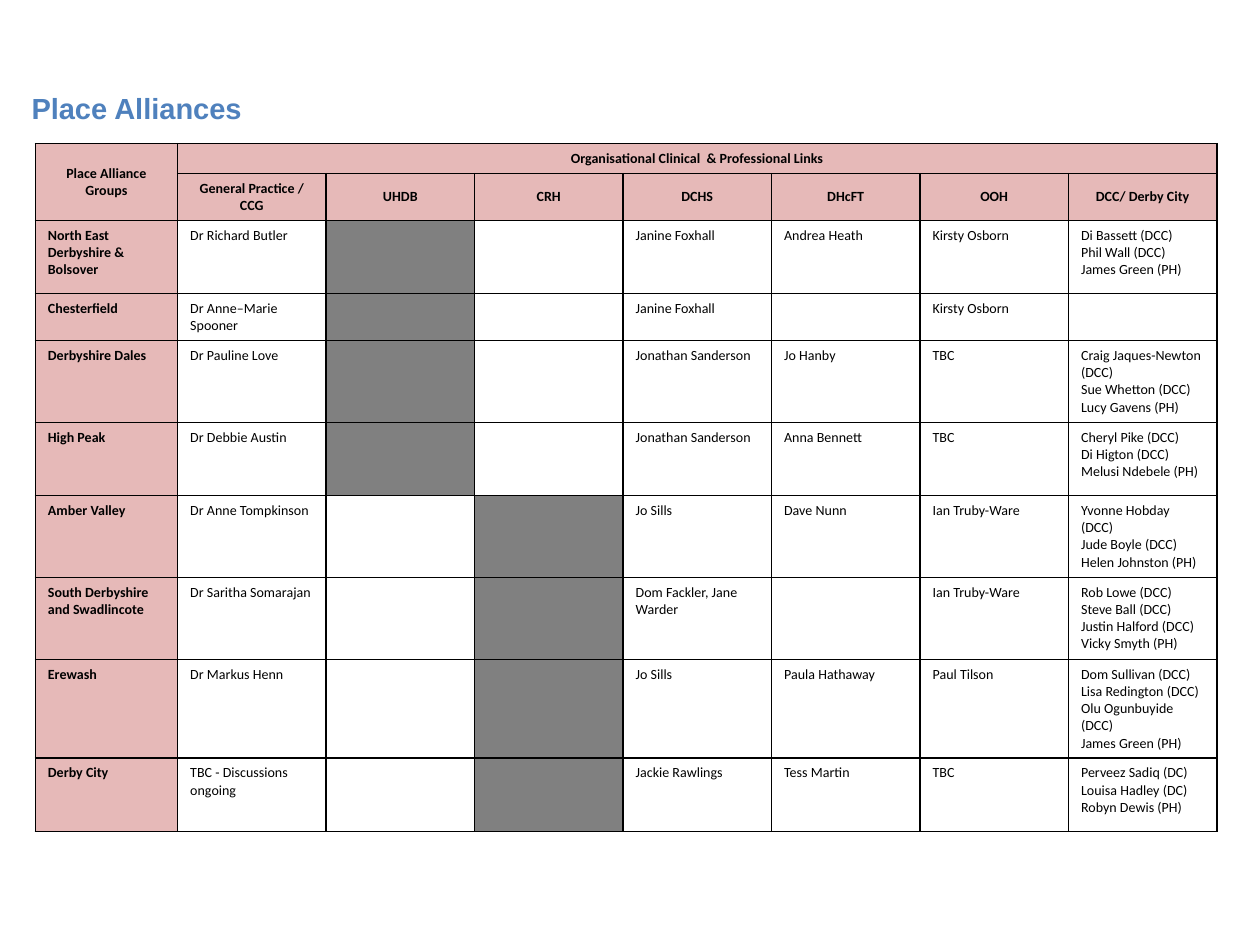
from lxml.etree import SubElement
from pptx import Presentation
from pptx.dml.color import RGBColor as RGB
from pptx.enum.text import MSO_ANCHOR as Anchor, MSO_AUTO_SIZE as Auto, PP_ALIGN as Align
from pptx.oxml.ns import qn
from pptx.util import Inches, Pt

COLOURS = {"title": "4F81BD", "head": "E6B9B8", "cell": "FFFFFF", "grey": "808080", "ink": "000000"}
UNIT = Inches(0.01)
NAMES_COL = 113
ROWS = [23, 37, 58, 37, 65, 58, 65, 65, 78, 58]
GREY = None
HEADS = ["General Practice / CCG", "UHDB", "CRH", "DCHS", "DHcFT", "OOH", "DCC/ Derby City"]
DATA = [
    ["North East Derbyshire & Bolsover", "Dr Richard Butler", GREY, "", "Janine Foxhall", "Andrea Heath",
     "Kirsty Osborn", "Di Bassett (DCC)\nPhil Wall (DCC)\nJames Green (PH)"],
    ["Chesterfield", "Dr Anne–Marie Spooner", GREY, "", "Janine Foxhall", "", "Kirsty Osborn", ""],
    ["Derbyshire Dales", "Dr Pauline Love", GREY, "", "Jonathan Sanderson", "Jo Hanby", "TBC",
     "Craig Jaques-Newton (DCC)\nSue Whetton (DCC)\nLucy Gavens (PH)"],
    ["High Peak", "Dr Debbie Austin", GREY, "", "Jonathan Sanderson", "Anna Bennett", "TBC",
     "Cheryl Pike (DCC)\nDi Higton (DCC)\nMelusi Ndebele (PH)"],
    ["Amber Valley", "Dr Anne Tompkinson", "", GREY, "Jo Sills", "Dave Nunn", "Ian Truby-Ware",
     "Yvonne Hobday (DCC)\nJude Boyle (DCC)\nHelen Johnston (PH)"],
    ["South Derbyshire and Swadlincote", "Dr Saritha Somarajan", "", GREY, "Dom Fackler, Jane Warder", "",
     "Ian Truby-Ware", "Rob Lowe (DCC)\nSteve Ball (DCC)\nJustin Halford (DCC)\nVicky Smyth (PH)"],
    ["Erewash", "Dr Markus Henn", "", GREY, "Jo Sills", "Paula Hathaway", "Paul Tilson",
     "Dom Sullivan (DCC)\nLisa Redington (DCC)\nOlu Ogunbuyide (DCC)\nJames Green (PH)"],
    ["Derby City", "TBC - Discussions ongoing", "", GREY, "Jackie Rawlings", "Tess Martin", "TBC",
     "Perveez Sadiq (DC)\nLouisa Hadley (DC)\nRobyn Dewis (PH)"],
]


def style(par, font, size, colour, bold):
    for run in par.runs:
        run.font.name = font
        run.font.size = Pt(size)
        run.font.bold = bold
        run.font.color.rgb = RGB.from_string(COLOURS[colour])


def add_title(slide, box, text):
    title = slide.shapes.title
    title.left, title.top, title.width, title.height = [n * UNIT for n in box]
    frame = title.text_frame
    frame.text = text
    frame.auto_size = Auto.NONE
    frame.word_wrap = True
    frame.vertical_anchor = Anchor.MIDDLE
    frame.paragraphs[0].alignment = Align.LEFT
    style(frame.paragraphs[0], "Arial", 16.6, "title", True)


def add_edges(cell):
    props = cell._tc.get_or_add_tcPr()
    for side in ("lnL", "lnR", "lnT", "lnB"):
        line = SubElement(props, qn(f"a:{side}"), w=str(Pt(1)))
        fill = SubElement(line, qn("a:solidFill"))
        SubElement(fill, qn("a:srgbClr"), val=COLOURS["ink"])


def fill_cell(cell, text, head, name):
    add_edges(cell)
    tone = "head" if head or name else "grey" if text is GREY else "cell"
    cell.fill.solid()
    cell.fill.fore_color.rgb = RGB.from_string(COLOURS[tone])
    cell.vertical_anchor = Anchor.MIDDLE if head else Anchor.TOP
    cell.text_frame.text = text or ""
    for par in cell.text_frame.paragraphs:
        par.alignment = Align.CENTER if head else Align.LEFT
        style(par, "Calibri", 8, "ink", head or name)
        if not par.runs:
            SubElement(par._p, qn("a:endParaRPr"), sz="800")


def add_grid(slide, box):
    blank = [""] * (len(HEADS) - 1)
    lines = [["Place Alliance Groups", "Organisational Clinical  & Professional Links", *blank], ["", *HEADS], *DATA]
    x, y, width, height = [n * UNIT for n in box]
    table = slide.shapes.add_table(len(lines), len(lines[0]), x, y, width, height).table
    first = NAMES_COL * UNIT
    for c, col in enumerate(table.columns):
        col.width = (width - first) // len(HEADS) if c else first
    for row, size in zip(table.rows, ROWS):
        row.height = height * size // sum(ROWS)
    for r, line in enumerate(lines):
        for c, text in enumerate(line):
            fill_cell(table.cell(r, c), text, r < 2, c == 0)
    table.cell(0, 0).merge(table.cell(1, 0))
    table.cell(0, 1).merge(table.cell(0, len(HEADS)))


def main():
    deck = Presentation()
    deck.slide_width, deck.slide_height = 1000 * UNIT, 750 * UNIT
    slide = deck.slides.add_slide(deck.slide_layouts[5])
    add_grid(slide, (28, 114, 938, 544))
    add_title(slide, (15, 58, 761, 56), "Place Alliances")
    deck.save("out.pptx")


if __name__ == "__main__":
    main()
